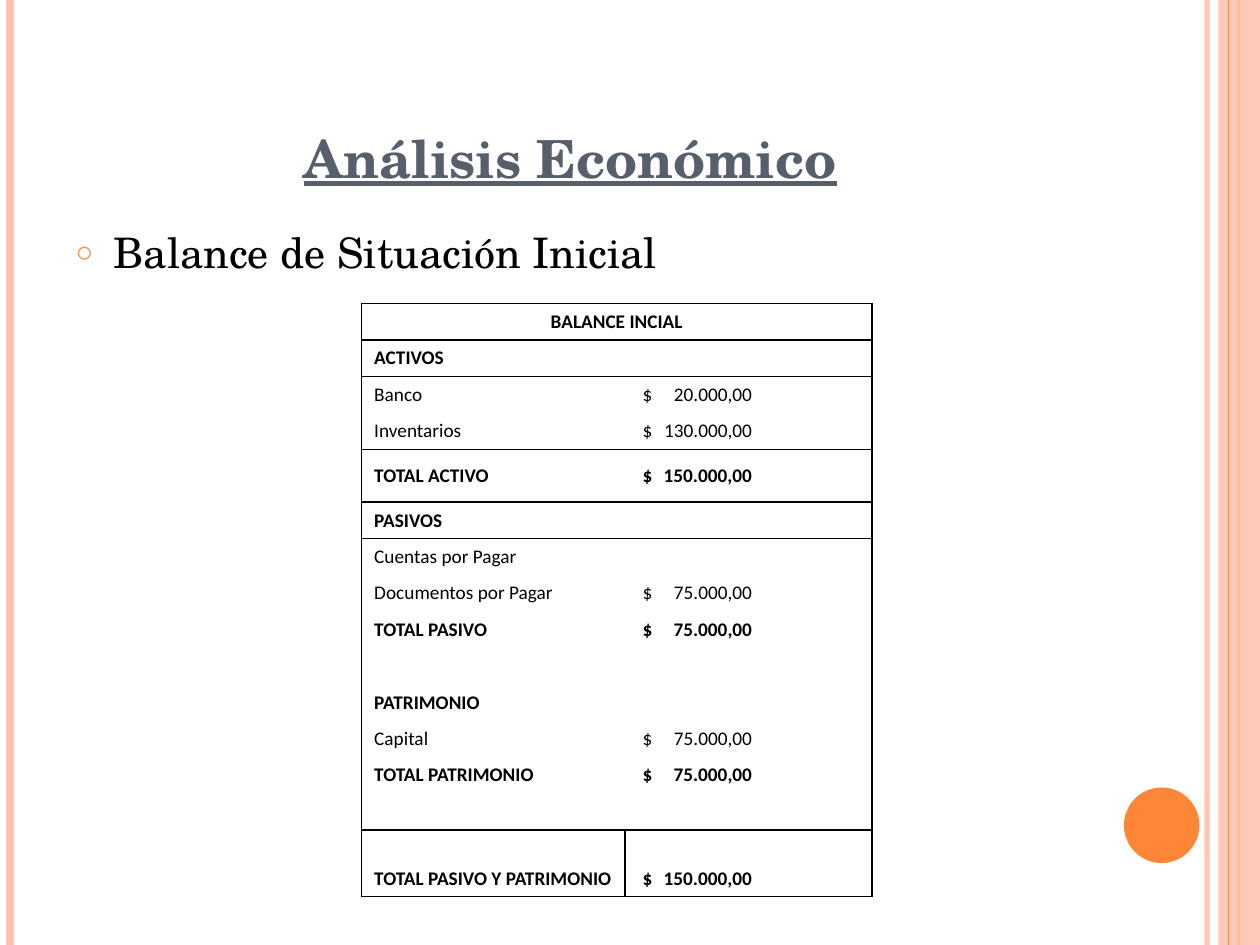
import lxml.etree
import pptx
import pptx.dml.color
import pptx.enum.shapes
import pptx.enum.text
import pptx.oxml.ns
import pptx.util

RGB = pptx.dml.color.RGBColor
Inches, Pt, qn = pptx.util.Inches, pptx.util.Pt, pptx.oxml.ns.qn
ANCHOR, ALIGN = pptx.enum.text.MSO_ANCHOR, pptx.enum.text.PP_ALIGN
SHAPE = pptx.enum.shapes.MSO_SHAPE

ORANGE, PEACH = RGB(0xFE, 0x86, 0x37), RGB(0xFE, 0xC3, 0xAE)
SLATE, BLACK = RGB(0x57, 0x5F, 0x6D), RGB(0, 0, 0)
SERIF, SANS = "TeX Gyre Schola", "Calibri"

# Content
TITLE = "Análisis Económico"
SUBJECT = "Balance de Situación Inicial"
# label, amount, bold
BALANCE = [
    ("BALANCE INCIAL", "", True),
    ("ACTIVOS", "", True),
    ("Banco", "20.000,00", False),
    ("Inventarios", "130.000,00", False),
    ("TOTAL ACTIVO", "150.000,00", True),
    ("PASIVOS", "", True),
    ("Cuentas por Pagar", "", False),
    ("Documentos por Pagar", "75.000,00", False),
    ("TOTAL PASIVO", "75.000,00", True),
    ("", "", False),
    ("PATRIMONIO", "", True),
    ("Capital", "75.000,00", False),
    ("TOTAL PATRIMONIO", "75.000,00", True),
    ("", "", False),
    ("TOTAL PASIVO Y PATRIMONIO", "150.000,00", True),
]
TOTAL_ACTIVE, LAST = 4, len(BALANCE) - 1
RULED_BELOW = {0, 3, TOTAL_ACTIVE, 13, LAST}
COLUMNS = (2.09, 1.96)
ROW, TALL_ROWS = 0.28, {TOTAL_ACTIVE: 0.42, LAST: 0.53}
# x, width in points, colour, opacity in percent
STRIPES = [(9.58, 3, PEACH, 93), (0.08, 4.5, PEACH, 100), (9.83, 1.5, ORANGE, 100)]
INNER_STRIPE = (9.75, 0.75, ORANGE, 100)

prs = pptx.Presentation()
prs.slide_width, prs.slide_height = Inches(10), Inches(7.5)
slide = prs.slides.add_slide(prs.slide_layouts[1])
shapes = slide.shapes


def add(parent, tag, **attrs):
    return lxml.etree.SubElement(parent, qn(tag), attrs)


def set_opacity(sp, percent):
    color = next(sp._element.spPr.iter(qn("a:srgbClr")))
    add(color, "a:alpha", val=str(percent * 1000))


def add_stripe(x, width, color, opacity):
    line = shapes.add_connector(pptx.enum.shapes.MSO_CONNECTOR.STRAIGHT,
                                Inches(x), 0, Inches(x), prs.slide_height)
    line.line.width = Pt(width)
    line.line.color.rgb = color
    if opacity < 100:
        set_opacity(line, opacity)
    add(line._element.spPr, "a:effectLst")


def add_solid(kind, x, y, w, h, color):
    sp = shapes.add_shape(kind, Inches(x), Inches(y), Inches(w), Inches(h))
    sp.shadow.inherit = False
    sp.fill.solid()
    sp.fill.fore_color.rgb = color
    sp.line.fill.background()
    return sp


def style(p, font, size, color, bold=False):
    for r in p.runs:
        r.font.name, r.font.size, r.font.bold = font, Pt(size), bold
        r.font.color.rgb = color


def place(sp, x, y, w, h):
    sp.left, sp.top, sp.width, sp.height = map(Inches, (x, y, w, h))
    shapes._spTree.append(sp._element)  # in front of the decoration


def set_borders(cell, sides):
    tcPr = cell._tc.get_or_add_tcPr()
    for i, side in enumerate(s for s in "LRTB" if s in sides):
        ln = lxml.etree.Element(qn("a:ln" + side), w=str(Pt(1)))
        add(add(ln, "a:solidFill"), "a:srgbClr", val=str(BLACK))
        tcPr.insert(i, ln)


# Side decoration
for stripe in STRIPES:
    add_stripe(*stripe)
set_opacity(add_solid(SHAPE.RECTANGLE, 9.67, 0, 0.33, 7.5, PEACH), 87)
add_stripe(*INNER_STRIPE)
add_solid(SHAPE.OVAL, 8.92, 6.25, 0.6, 0.6, ORANGE)

# Title
title = shapes.title
body = slide.placeholders[1]
place(title, 0.5, 0.3, 8.17, 1.25)
title.text_frame.vertical_anchor = ANCHOR.BOTTOM
p = title.text_frame.paragraphs[0]
p.text = TITLE
p.alignment = ALIGN.CENTER
p.add_run().text = " "
style(p, SERIF, 30, SLATE)
p.runs[0].font.bold = p.runs[0].font.underline = True

# Subject with a ring bullet
place(body, 0.5, 1.75, 8.17, 5.33)
p = body.text_frame.paragraphs[0]
p.text = SUBJECT
pPr = p._p.get_or_add_pPr()
pPr.set("marL", str(Inches(0.3)))
pPr.set("indent", str(-Inches(0.3)))
add(add(pPr, "a:buClr"), "a:srgbClr", val=str(ORANGE))
add(pPr, "a:buSzPct", val="70000")
add(pPr, "a:buChar", char="○")
p.space_before = Pt(0)
style(p, SERIF, 24, BLACK)

# Balance table
heights = [TALL_ROWS.get(i, ROW) for i in range(len(BALANCE))]
frame = shapes.add_table(len(BALANCE), len(COLUMNS), Inches(2.87), Inches(2.41),
                         Inches(sum(COLUMNS)), Inches(sum(heights)))
table = frame.table
table.first_row = table.horz_banding = False
style_id = next(table._tbl.iter(qn("a:tableStyleId")))
style_id.text = "{2D5ABB26-0587-4C30-8999-92F81FD0307C}"  # no style, no grid
for column, width in zip(table.columns, COLUMNS):
    column.width = Inches(width)

for i, (label, amount, bold) in enumerate(BALANCE):
    table.rows[i].height = Inches(heights[i])
    for j, text in enumerate((label, f"$\t{amount}" if amount else "")):
        cell = table.cell(i, j)
        cell.fill.background()
        cell.vertical_anchor = ANCHOR.MIDDLE if i == TOTAL_ACTIVE else ANCHOR.BOTTOM
        cell.margin_left = Inches((0.1, 0.14)[j])
        cell.margin_right = Inches(0.05)
        p = cell.text_frame.paragraphs[0]
        if text:
            p.text = text
            style(p, SANS, 11, BLACK, bold)
        else:
            add(p._p, "a:endParaRPr", sz="1100")
        if j == 1 and amount:
            tabs = add(p._p.get_or_add_pPr(), "a:tabLst")
            add(tabs, "a:tab", pos=str(Inches(0.87)), algn="r")
        sides = "LR"[j]
        if i == LAST:
            sides = "LR"
        if i == 0 or i - 1 in RULED_BELOW:
            sides += "T"
        if i in RULED_BELOW:
            sides += "B"
        set_borders(cell, sides)

# Heading row across both columns
heading = table.cell(0, 0)
heading.merge(table.cell(0, 1))
heading.margin_right = Inches(0.1)
heading.text_frame.paragraphs[0].alignment = ALIGN.CENTER
set_borders(heading, "R")

prs.save("out.pptx")
